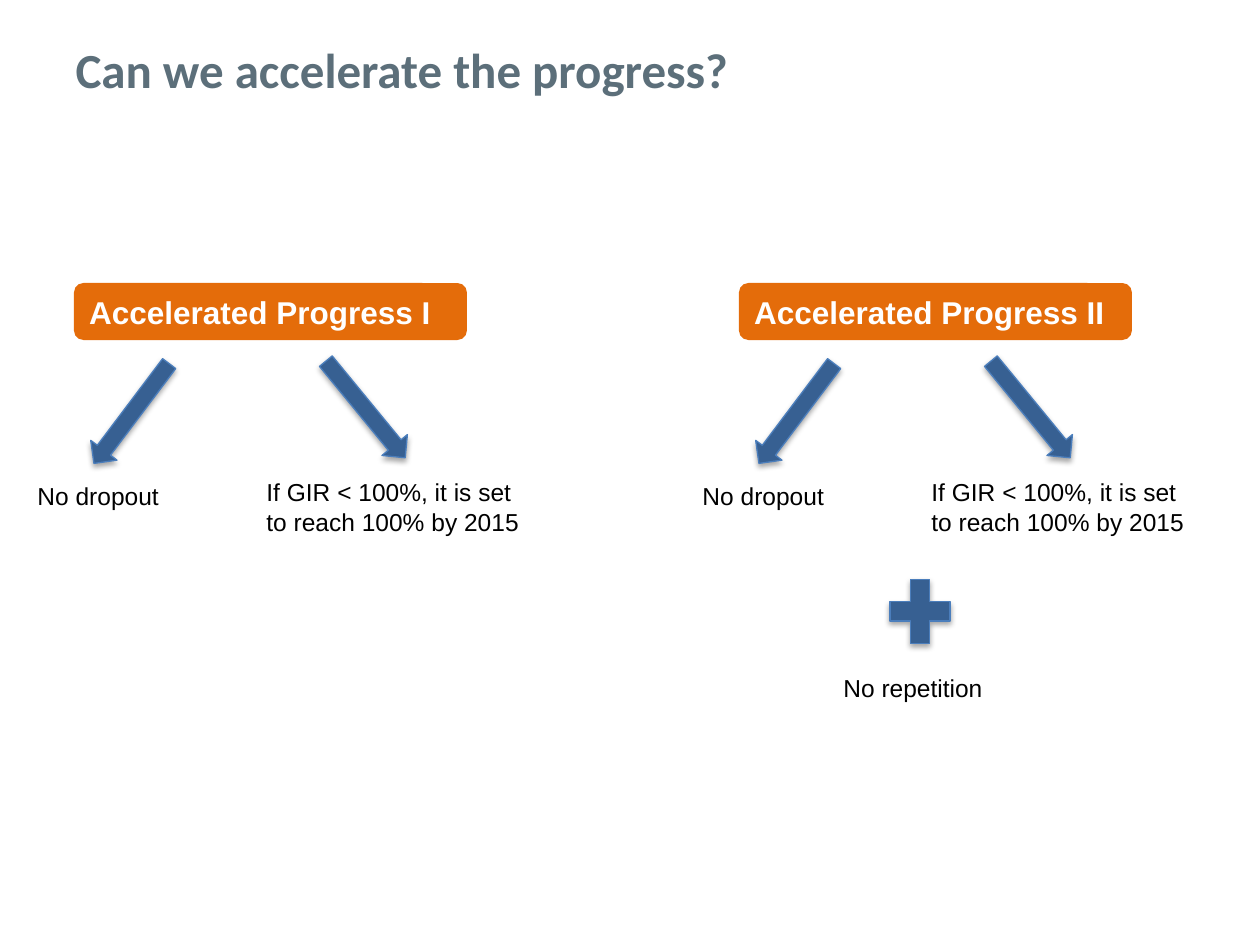
from lxml import etree
from pptx import Presentation, util as u
from pptx.dml.color import RGBColor
from pptx.enum import shapes, text
from pptx.oxml.ns import qn

PX = u.Inches(1) / 126
SHAPE = shapes.MSO_SHAPE


def px(*lengths):
    return [u.Emu(round(n * PX)) for n in lengths]


def rgb(value):
    return RGBColor.from_string(value)


class Deck:
    ORANGE, BLUE, EDGE = "E46C0A", "376092", "4B7EBC"
    SLATE, WHITE, BLACK = "5C6F7A", "FFFFFF", "000000"

    def __init__(self):
        self.prs = Presentation()
        self.prs.slide_width, self.prs.slide_height = px(1260, 945)
        self.s = self.prs.slides.add_slide(self.prs.slide_layouts[5])

    def add_text(self, sp, words, size, color, bold=False, font="Arial"):
        tf = sp.text_frame
        tf.word_wrap = True
        p = tf.paragraphs[0]
        p.alignment = text.PP_ALIGN.LEFT
        r = p.add_run()
        r.text = words
        r.font.name, r.font.size, r.font.bold = font, u.Pt(size), bold
        r.font.color.rgb = rgb(color)
        return tf

    def title(self, words, *box):
        sp = self.s.shapes.title
        sp.left, sp.top, sp.width, sp.height = px(*box)
        tf = self.add_text(sp, words, 28, self.SLATE, True, "Calibri")
        tf.vertical_anchor = text.MSO_ANCHOR.MIDDLE

    def label(self, parent, words, *box):
        sp = parent.add_textbox(*px(*box))
        tf = self.add_text(sp, words, 14, self.BLACK)
        tf.auto_size = text.MSO_AUTO_SIZE.SHAPE_TO_FIT_TEXT

    def shape(self, parent, kind, fill, *box):
        sp = parent.add_shape(kind, *px(*box))
        sp.shadow.inherit = False
        sp.fill.solid()
        sp.fill.fore_color.rgb = rgb(fill)
        sp.line.fill.background()
        return sp

    def heading(self, parent, words, *box):
        sp = self.shape(parent, SHAPE.ROUNDED_RECTANGLE, self.ORANGE, *box)
        self.add_text(sp, words, 18, self.WHITE, True)

    def symbol(self, parent, kind, *box, rotation=0):
        """Blue outlined shape with a soft shadow below it."""
        sp = self.shape(parent, kind, self.BLUE, *box)
        sp.rotation = rotation
        sp.line.color.rgb = rgb(self.EDGE)
        sp.line.width = u.Pt(0.75)
        effects = sp._element.spPr.find(qn("a:effectLst"))
        shadow = etree.SubElement(effects, qn("a:outerShdw"), blurRad="40000",
                                  dist="23000", dir="5400000", rotWithShape="0")
        color = etree.SubElement(shadow, qn("a:srgbClr"), val=self.BLACK)
        etree.SubElement(color, qn("a:alpha"), val="35000")

    def scenario(self, name, x):
        """Heading with arrows to its two conditions, grouped."""
        group = self.s.shapes.add_group_shape().shapes
        self.heading(group, name, x + 49, 283, 393, 57)
        self.symbol(group, SHAPE.RIGHT_ARROW, x + 44, 397, 125, 33, rotation=127)
        self.symbol(group, SHAPE.RIGHT_ARROW, x + 278, 393, 125, 33, rotation=50.6)
        self.label(group, "No dropout", x, 475, 171, 43)
        self.label(group, "If GIR < 100%, it is set to reach 100% by 2015",
                   x + 229, 471, 281, 72)


def main():
    deck = Deck()
    deck.title("Can we accelerate the progress?", 63, 0, 963, 137)
    for i, name in enumerate(("Accelerated Progress I", "Accelerated Progress II")):
        deck.scenario(name, 25 + 665 * i)
    deck.label(deck.s.shapes, "No repetition", 831, 667, 178, 43)
    deck.symbol(deck.s.shapes, SHAPE.MATH_PLUS, 879, 568, 82, 87)
    deck.prs.save("out.pptx")


if __name__ == "__main__":
    main()
